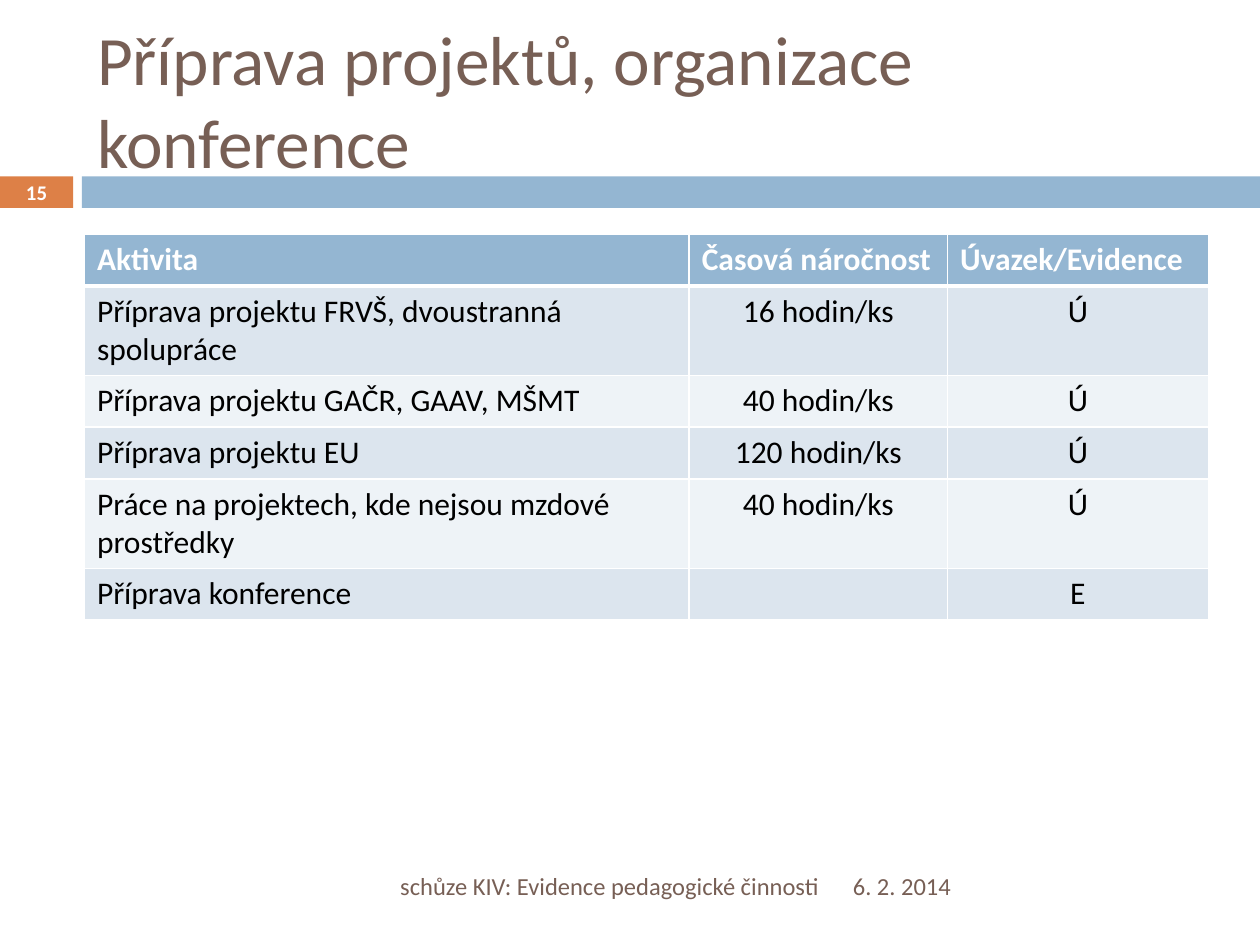
from lxml import etree
from pptx import Presentation
from pptx.dml.color import RGBColor
from pptx.enum import shapes, text
from pptx.oxml import ns
from pptx.util import Inches, Pt

COLORS = {"orange": "DD8047", "blue": "94B6D2", "brown": "775F55", "white": "FFFFFF",
          "black": "000000", "band_dark": "DCE5EE", "band_light": "EEF3F7"}
LEFT, CENTER, RIGHT = text.PP_ALIGN.LEFT, text.PP_ALIGN.CENTER, text.PP_ALIGN.RIGHT


def write(frame, words, size, color, align=LEFT, bold=False):
    frame.text = words
    frame.word_wrap = True
    frame.vertical_anchor = text.MSO_ANCHOR.MIDDLE
    paragraph = frame.paragraphs[0]
    paragraph.alignment = align
    for run in paragraph.runs:
        run.font.name = "Calibri"
        run.font.size = Pt(size)
        run.font.bold = bold
        run.font.color.rgb = RGBColor.from_string(COLORS[color])


def add_border(cell, side, width):
    line = etree.SubElement(cell._tc.get_or_add_tcPr(), ns.qn("a:" + side), w=str(Pt(width)))
    fill = etree.SubElement(line, ns.qn("a:solidFill"))
    etree.SubElement(fill, ns.qn("a:srgbClr"), val=COLORS["white"])


prs = Presentation()
prs.slide_width, prs.slide_height = Inches(10), Inches(7.5)
slide = prs.slides.add_slide(prs.slide_layouts[5])

# Bars under the title
for left, width, color in [(0, 0.58, "orange"), (0.65, 9.35, "blue")]:
    bar = slide.shapes.add_shape(shapes.MSO_SHAPE.RECTANGLE, Inches(left), Inches(1.4),
                                 Inches(width), Inches(0.25))
    bar.shadow.inherit = False
    bar.fill.solid()
    bar.fill.fore_color.rgb = RGBColor.from_string(COLORS[color])
    bar.line.fill.background()

# Title
title = slide.shapes.title
title.left, title.top = Inches(0.67), Inches(0.25)
title.width, title.height = Inches(8.92), Inches(1.08)
write(title.text_frame, "Příprava projektů, organizace konference", 39.6, "brown")
title.text_frame.auto_size = text.MSO_AUTO_SIZE.NONE

# Table of activities
activities = [
    ("Aktivita", "Časová náročnost", "Úvazek/Evidence"),
    ("Příprava projektu FRVŠ, dvoustranná spolupráce", "16 hodin/ks", "Ú"),
    ("Příprava projektu GAČR, GAAV, MŠMT", "40 hodin/ks", "Ú"),
    ("Příprava projektu EU", "120 hodin/ks", "Ú"),
    ("Práce na projektech, kde nejsou mzdové prostředky", "40 hodin/ks", "Ú"),
    ("Příprava konference", "", "E"),
]
column_widths = [4.8, 2.05, 2.07]
row_height = 0.41
table = slide.shapes.add_table(len(activities), len(column_widths), Inches(0.67), Inches(1.86),
                               Inches(sum(column_widths)),
                               Inches(row_height * len(activities))).table
for column, width in zip(table.columns, column_widths):
    column.width = Inches(width)
for r, activity in enumerate(activities):
    header = r == 0
    band = "blue" if header else "band_dark" if r % 2 else "band_light"
    for c, words in enumerate(activity):
        cell = table.cell(r, c)
        write(cell.text_frame, words, 18, "white" if header else "black",
              LEFT if header or c == 0 else CENTER, header)
        cell.vertical_anchor = text.MSO_ANCHOR.TOP
        for side in ("lnL", "lnR", "lnT", "lnB"):
            thick = (header and side == "lnB") or (r == 1 and side == "lnT")
            add_border(cell, side, 3 if thick else 1)
        cell.fill.solid()
        cell.fill.fore_color.rgb = RGBColor.from_string(COLORS[band])

# Date, footer and slide number
for left, top, width, height, words, size, color, align, bold in [
    (6.67, 6.83, 2.92, 0.4, "6. 2. 2014", 14, "brown", LEFT, False),
    (0.67, 6.83, 5.93, 0.4, "schůze KIV: Evidence pedagogické činnosti", 14, "brown", RIGHT, False),
    (0, 1.39, 0.58, 0.27, "15", 11.9, "white", CENTER, True),
]:
    label = slide.shapes.add_textbox(Inches(left), Inches(top), Inches(width), Inches(height))
    write(label.text_frame, words, size, color, align, bold)

prs.save("out.pptx")
